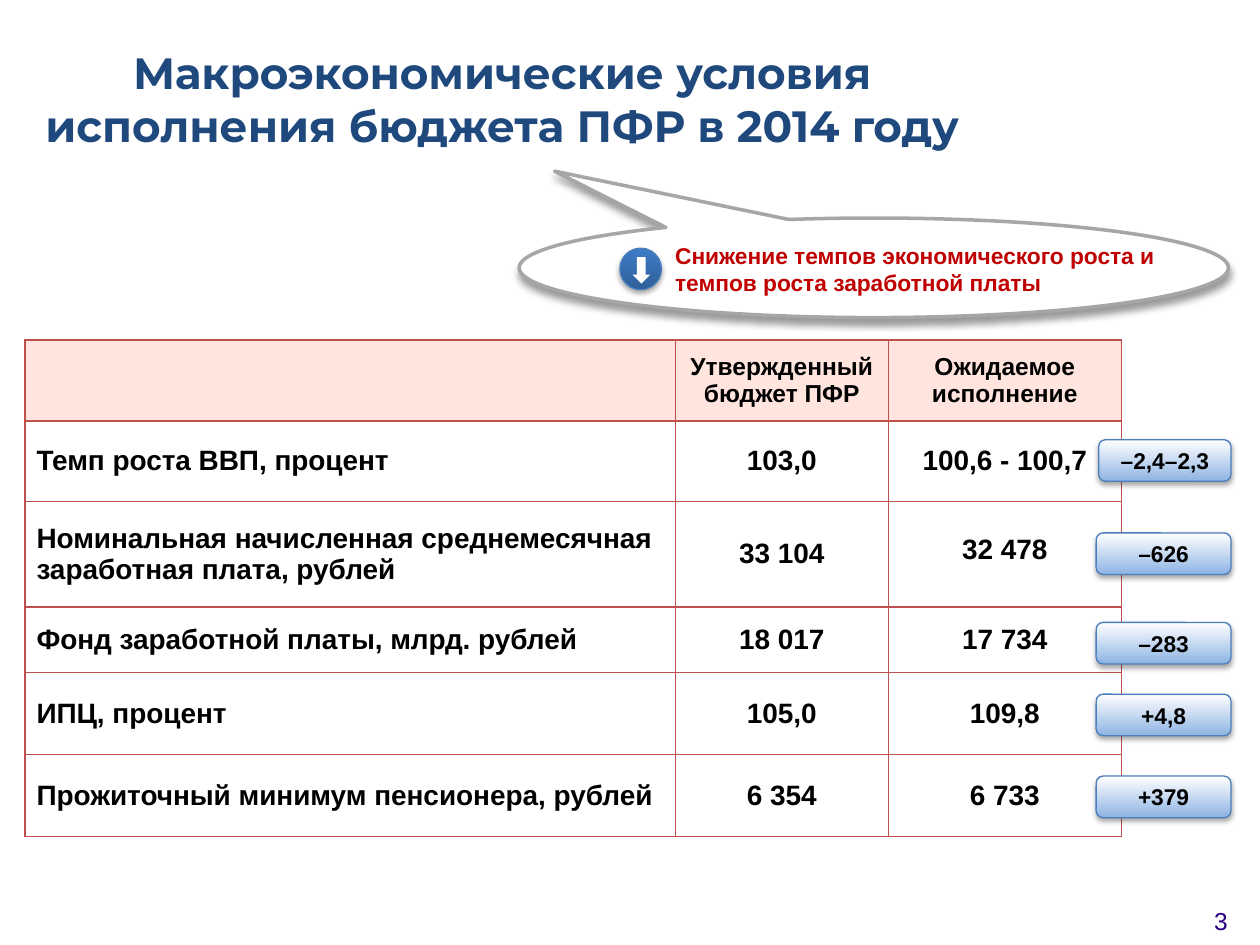
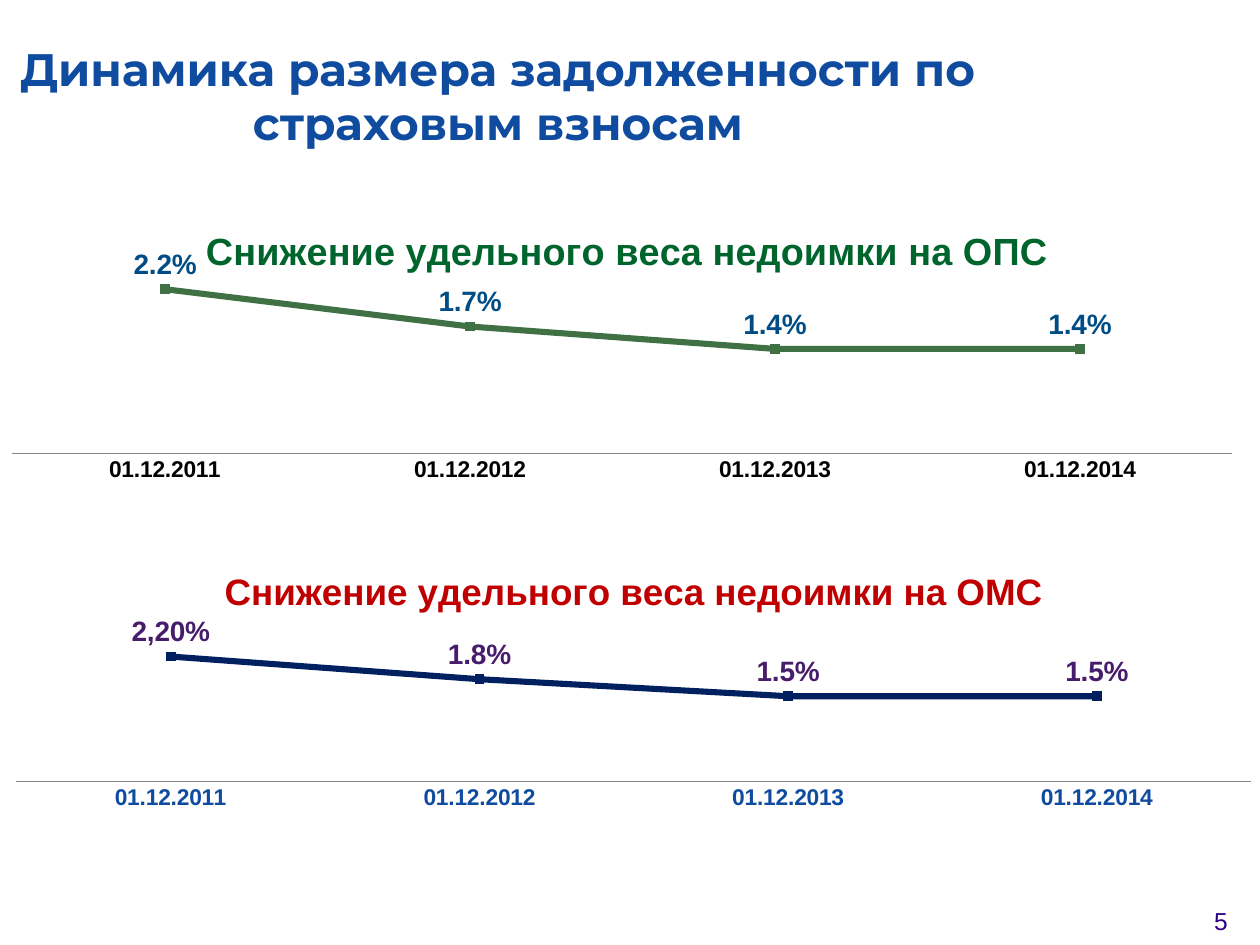
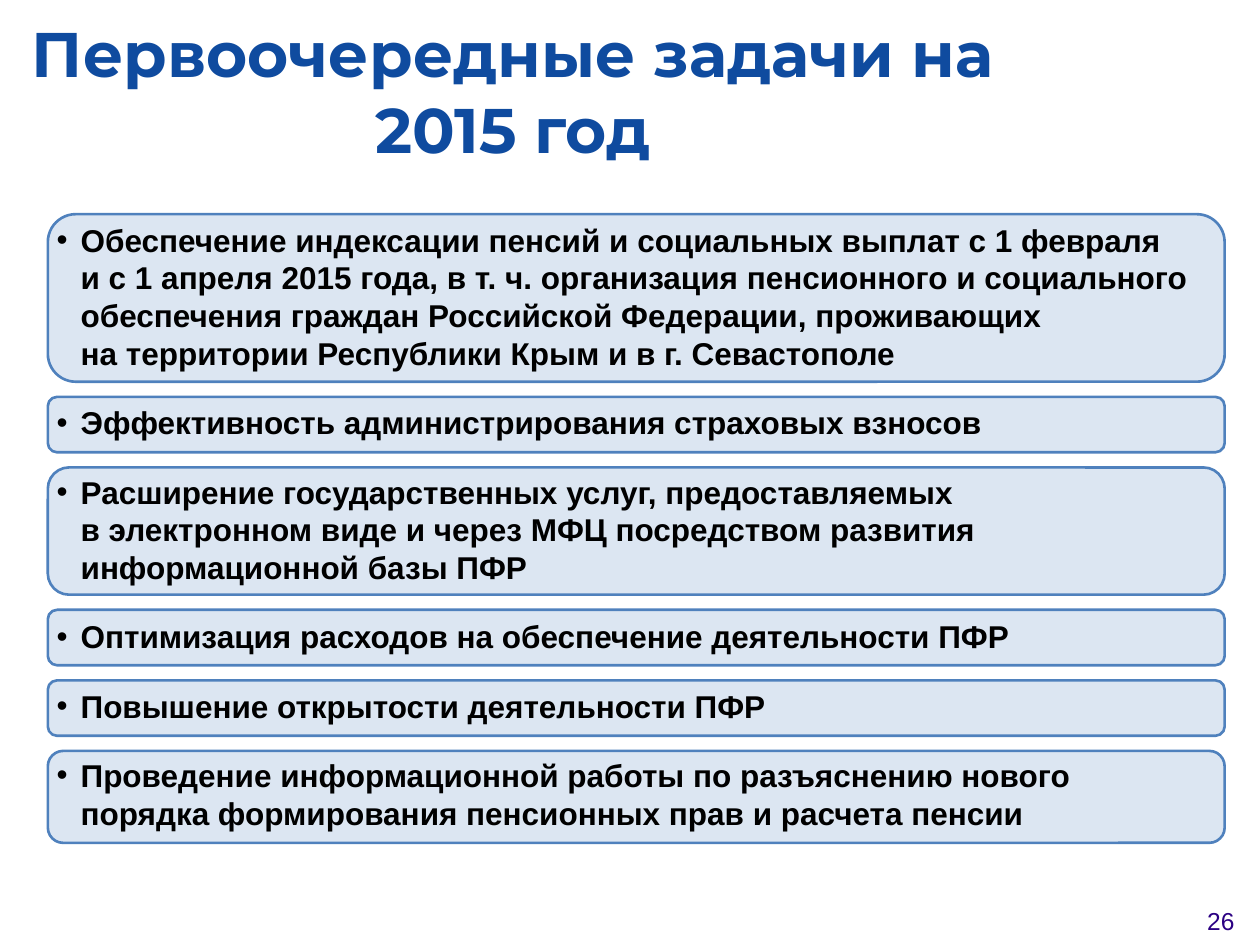
"""Builds three slides on the pension fund budget: conditions, arrears and priorities."""
from pptx import Presentation
from pptx import util as u
from pptx.chart import data as cd
from pptx.dml import color
from pptx.enum import chart as ch, shapes, text
from pptx.oxml import parse_xml
from pptx.oxml.ns import nsdecls, qn

NAVY, BLUE, RED, BLACK, WHITE = "1F497D", "0F4B9F", "C00000", "000000", "FFFFFF"
TITLE_ONLY, TITLE_AND_LIST = 5, 1
CENTER, LEFT = text.PP_ALIGN.CENTER, text.PP_ALIGN.LEFT
SOFT_SHADOW = (35, 3.1, 1.8)


def rgb(value):
    return color.RGBColor.from_string(value)


def place(sp, at):
    sp.left, sp.top, sp.width, sp.height = map(u.Inches, at)


def style(font, size, hue, bold=False, name="Arial"):
    font.size, font.bold, font.name = u.Pt(size), bold, name
    font.color.rgb = rgb(hue)


def write(p, words, size, hue=BLACK, bold=True, name="Arial", align=LEFT):
    p.alignment = align
    for i, line in enumerate(words.split("\n")):
        if i:
            p.add_line_break()
        r = p.add_run()
        r.text = line
        style(r.font, size, hue, bold, name)


def set_layout(node, index, *box):
    for old in node.findall(qn("c:layout")):
        node.remove(old)
    inner = '<c:layoutTarget val="inner"/>' if len(box) == 4 else ""
    modes = '<c:xMode val="edge"/><c:yMode val="edge"/>'
    sizes = "".join(f'<c:{tag} val="{v}"/>' for tag, v in zip("xywh", box))
    node.insert(index, parse_xml(
        f'<c:layout {nsdecls("c")}><c:manualLayout>{inner}{modes}{sizes}'
        "</c:manualLayout></c:layout>"))


class Deck:
    def __init__(self):
        self.prs = Presentation()
        self.prs.slide_width, self.prs.slide_height = u.Inches(10), u.Inches(7.5)
        self.s = None

    def slide(self, title, at, size, hue, number, layout=TITLE_ONLY):
        self.s = self.prs.slides.add_slide(self.prs.slide_layouts[layout])
        sp = self.s.shapes.title
        place(sp, at)
        tf = sp.text_frame
        tf.word_wrap, tf.auto_size = True, text.MSO_AUTO_SIZE.NONE
        tf.vertical_anchor = text.MSO_ANCHOR.MIDDLE
        write(tf.paragraphs[0], title, size, hue, name="Montserrat", align=CENTER)
        self.label(str(number), (9.41, 7.14, 0.56, 0.36), 14, "2B0083", False, CENTER)

    def label(self, words, at, size, hue, bold=True, align=LEFT):
        tf = self.s.shapes.add_textbox(*map(u.Inches, at)).text_frame
        tf.word_wrap = True
        write(tf.paragraphs[0], words, size, hue, bold, align=align)

    def shape(self, kind, at, fill, line=None, weight=0.75, shadow=None):
        sp = self.s.shapes.add_shape(kind, *map(u.Inches, at))
        if isinstance(fill, tuple):
            sp.fill.gradient()
            sp.fill.gradient_angle = 90
            for stop, hue in zip(sp.fill.gradient_stops, fill):
                stop.color.rgb = rgb(hue)
        else:
            sp.fill.solid()
            sp.fill.fore_color.rgb = rgb(fill)
        if line:
            sp.line.color.rgb = rgb(line)
            sp.line.width = u.Pt(weight)
        else:
            sp.line.fill.background()
        sp.shadow.inherit = False
        if shadow:
            alpha, blur, dist = shadow
            sp.element.spPr.find(qn("a:effectLst")).append(parse_xml(
                f'<a:outerShdw {nsdecls("a")} blurRad="{u.Pt(blur)}" dist="{u.Pt(dist)}" '
                f'dir="5400000" rotWithShape="0"><a:srgbClr val="000000">'
                f'<a:alpha val="{alpha * 1000}"/></a:srgbClr></a:outerShdw>'))
        return sp

    def badge(self, words, at):
        sp = self.shape(shapes.MSO_SHAPE.ROUNDED_RECTANGLE, at, ("8EB4E3", WHITE),
                        "4B7EBC", shadow=SOFT_SHADOW)
        tf = sp.text_frame
        tf.margin_left = tf.margin_right = 0
        tf.margin_top = tf.margin_bottom = u.Inches(0.04)
        tf.vertical_anchor = text.MSO_ANCHOR.MIDDLE
        write(tf.paragraphs[0], words, 13, align=CENTER)

    def table(self, rows, left, top, widths, heights):
        frame = self.s.shapes.add_table(
            len(rows), len(widths), *map(u.Inches, (left, top, sum(widths), sum(heights))))
        tbl = frame.table
        tbl.first_row = tbl.horz_banding = False
        for column, width in zip(tbl.columns, widths):
            column.width = u.Inches(width)
        for i, (row, height) in enumerate(zip(rows, heights)):
            tbl.rows[i].height = u.Inches(height)
            for j, words in enumerate(row):
                self.cell(tbl.cell(i, j), words, header=i == 0, align=CENTER if j else LEFT)
        return tbl

    def cell(self, cell, words, header, align):
        pr = cell._tc.get_or_add_tcPr()
        for side in "LRTB":
            pr.append(parse_xml(
                f'<a:ln{side} {nsdecls("a")} w="12700"><a:solidFill>'
                f'<a:srgbClr val="C0504D"/></a:solidFill></a:ln{side}>'))
        cell.fill.solid()
        cell.fill.fore_color.rgb = rgb("FFE5DD" if header else WHITE)
        cell.vertical_anchor = text.MSO_ANCHOR.MIDDLE
        cell.margin_left = cell.margin_right = u.Inches(0.09)
        if words:
            write(cell.text_frame.paragraphs[0], words, 14 if header else 16, align=align)

    def line_chart(self, at, title, title_at, plot, dates, values, hues, title_size):
        title_hue, line_hue, label_hue, axis_hue = hues
        data = cd.CategoryChartData(number_format="0.0%")
        data.categories = dates
        data.add_series("Series 1", values)
        chart = self.s.shapes.add_chart(
            ch.XL_CHART_TYPE.LINE_MARKERS, *map(u.Inches, at), data).chart
        style(chart.font, 14, axis_hue)
        chart.has_legend = False
        chart.has_title = True
        write(chart.chart_title.text_frame.paragraphs[0], title, title_size, title_hue,
              align=CENTER)
        set_layout(chart.element.xpath("c:chart/c:title")[0], 1, *title_at)
        set_layout(chart.element.xpath("c:chart/c:plotArea")[0], 0, *plot)

        axis = chart.category_axis
        axis.major_tick_mark = ch.XL_TICK_MARK.NONE
        axis.format.line.color.rgb = rgb("868686")
        style(axis.tick_labels.font, 13, axis_hue, True)
        scale = chart.value_axis
        scale.visible = scale.has_major_gridlines = False
        scale.minimum_scale, scale.maximum_scale = 0, 0.025

        chart.plots[0].vary_by_categories = False
        series = chart.plots[0].series[0]
        series.smooth = False
        series.format.line.color.rgb = rgb(line_hue)
        series.format.line.width = u.Pt(3.5)
        marker = series.marker
        marker.style, marker.size = ch.XL_MARKER_STYLE.SQUARE, 5
        marker.format.fill.solid()
        marker.format.fill.fore_color.rgb = rgb(line_hue)
        marker.format.line.color.rgb = rgb(line_hue)
        labels = series.data_labels
        labels.show_value = True
        labels.position = ch.XL_LABEL_POSITION.ABOVE
        labels.number_format, labels.number_format_is_linked = "0.0%", False
        style(labels.font, 16, label_hue, True)
        return series

    def bullets(self, items, at):
        sp = self.s.placeholders[1]
        place(sp, at)
        sp.element.getparent().append(sp.element)
        tf = sp.text_frame
        tf.word_wrap, tf.auto_size = True, text.MSO_AUTO_SIZE.NONE
        for i, words in enumerate(items):
            p = tf.add_paragraph() if i else tf.paragraphs[0]
            pr = p._p.get_or_add_pPr()
            pr.set("marL", str(u.Inches(0.19)))
            pr.set("indent", str(-u.Inches(0.19)))
            pr.append(parse_xml(f'<a:buChar {nsdecls("a")} char="•"/>'))
            p.space_before, p.space_after = u.Pt(0), u.Pt(18)
            write(p, words, 18)


def conditions(deck):
    deck.slide("Макроэкономические условия исполнения бюджета ПФР в 2014 году",
               (-0.21, 0.29, 8.39, 0.98), 25, NAVY, 3)
    tbl = deck.table([
        ("", "Утвержденный бюджет ПФР", "Ожидаемое исполнение"),
        ("Темп роста ВВП, процент", "103,0", "100,6 - 100,7"),
        ("Номинальная начисленная среднемесячная заработная плата, рублей",
         "33 104", "32 478"),
        ("Фонд заработной платы, млрд. рублей", "18 017", "17 734"),
        ("ИПЦ, процент", "105,0", "109,8"),
        ("Прожиточный минимум пенсионера, рублей", "6 354", "6 733"),
    ], 0.2, 2.7, (5.16, 1.69, 1.85), (0.64, 0.64, 0.84, 0.52, 0.65, 0.65))
    tbl.cell(2, 2).margin_bottom = u.Inches(0.12)

    callout = deck.shape(shapes.MSO_SHAPE.OVAL_CALLOUT, (4.12, 1.73, 5.63, 0.79), WHITE,
                         "A6A6A6", 2, (40, 4, 3))
    callout.adjustments[0], callout.adjustments[1] = 0.45, 0.97
    callout.rotation = 180
    deck.label("Снижение темпов экономического роста и темпов роста заработной платы",
               (5.26, 1.87, 4.05, 0.54), 13, RED)
    deck.shape(shapes.MSO_SHAPE.OVAL, (4.92, 1.97, 0.33, 0.33), ("2F5F99", "3D7CC7"),
               "4B7EBC", shadow=SOFT_SHADOW)
    deck.shape(shapes.MSO_SHAPE.DOWN_ARROW, (5.02, 2.04, 0.14, 0.21), WHITE)

    deck.badge("–2,4–2,3", (8.72, 3.49, 1.05, 0.33))
    for change, top in (("–626", 4.23), ("–283", 4.94), ("+4,8", 5.51), ("+379", 6.16)):
        deck.badge(change, (8.7, top, 1.07, 0.33))


def arrears(deck):
    deck.slide("Динамика размера задолженности по страховым взносам",
               (0, 0.44, 7.91, 0.63), 26, BLUE, 5)
    dates = [f"01.12.{year}" for year in range(2011, 2015)]
    deck.line_chart((0, 1.5, 9.88, 2.69), "Снижение удельного веса недоимки на ОПС",
                    (0.16, 0.09), (0.01, 0.23, 0.98, 0.55), dates,
                    (0.022, 0.017, 0.014, 0.014),
                    ("00642D", "3F7145", "004D86", BLACK), 21.6)
    purple = "471C6B"
    series = deck.line_chart((0.03, 4.46, 10, 2.68), "Снижение удельного веса недоимки на ОМС",
                             (0.17, 0), (0.01, 0.23, 0.98, 0.42), dates,
                             (0.022, 0.018, 0.015, 0.015),
                             (RED, "002060", purple, BLUE), 21)
    first = series.points[0].data_label
    write(first.text_frame.paragraphs[0], "2,20%", 16, purple)
    first.position = ch.XL_LABEL_POSITION.ABOVE


def priorities(deck):
    deck.slide("Первоочередные задачи на 2015 год", (0.11, 0.06, 7.92, 1.31), 36, BLUE, 26,
               TITLE_AND_LIST)
    tasks = (
        ("Обеспечение индексации пенсий и социальных выплат с 1 февраля\n"
         "и с 1 апреля 2015 года, в т. ч. организация пенсионного и социального "
         "обеспечения граждан Российской Федерации, проживающих\n"
         "на территории Республики Крым и в г. Севастополе", 1.33),
        ("Эффективность администрирования страховых взносов", 0.44),
        ("Расширение государственных услуг, предоставляемых\n"
         "в электронном виде и через МФЦ посредством развития информационной базы ПФР", 1.01),
        ("Оптимизация расходов на обеспечение деятельности ПФР", 0.44),
        ("Повышение открытости деятельности ПФР", 0.44),
        ("Проведение информационной работы по разъяснению нового порядка формирования "
         "пенсионных прав и расчета пенсии", 0.73),
    )
    top, gap = 1.7, 0.12
    for _, height in tasks:
        deck.shape(shapes.MSO_SHAPE.ROUNDED_RECTANGLE, (0.38, top, 9.34, height), "DCE6F2",
                   "4F81BD", 1.5)
        top += height + gap
    deck.bullets([words for words, _ in tasks], (0.35, 1.7, 9.27, 5))


def main():
    deck = Deck()
    conditions(deck)
    arrears(deck)
    priorities(deck)
    deck.prs.save("out.pptx")


if __name__ == "__main__":
    main()
